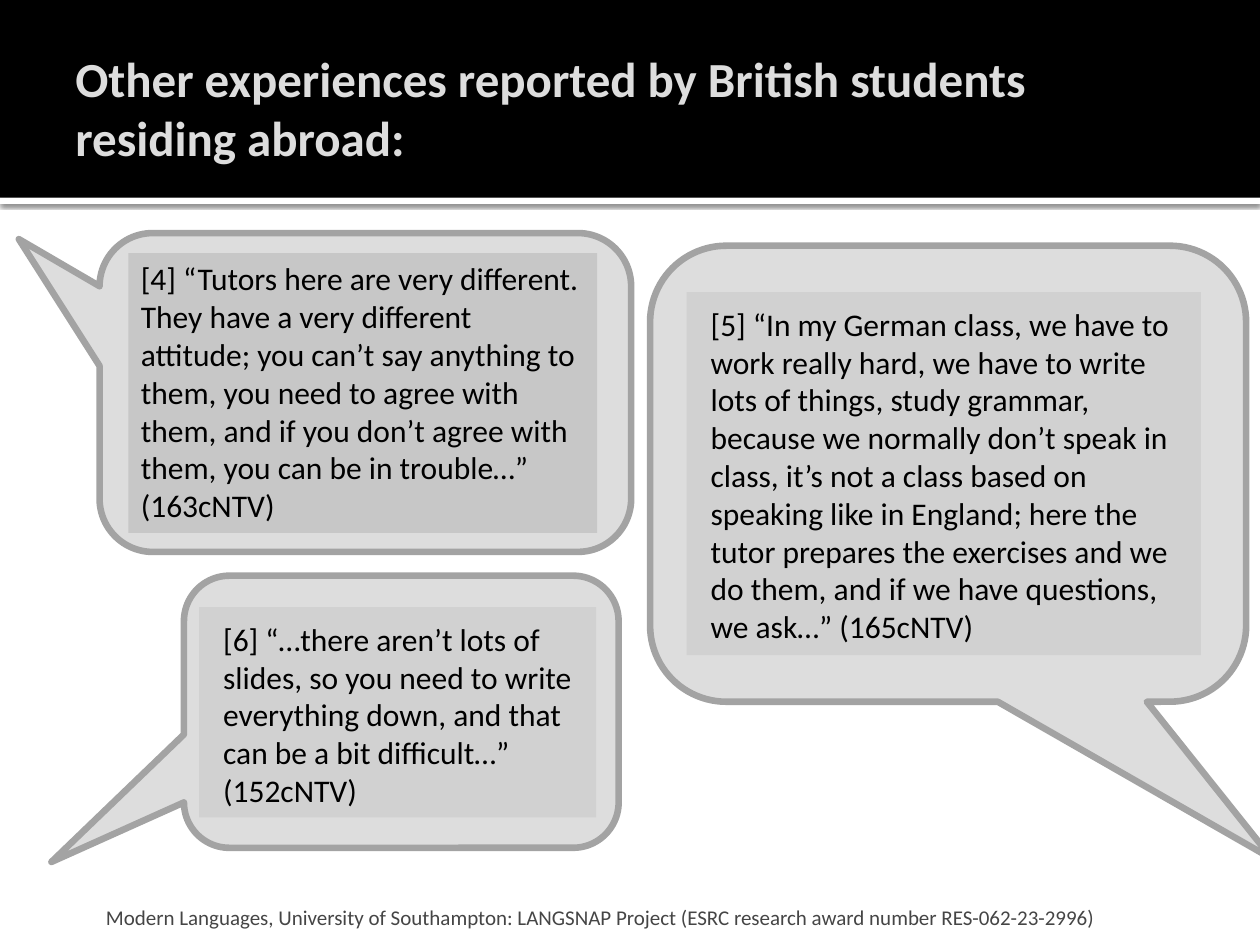
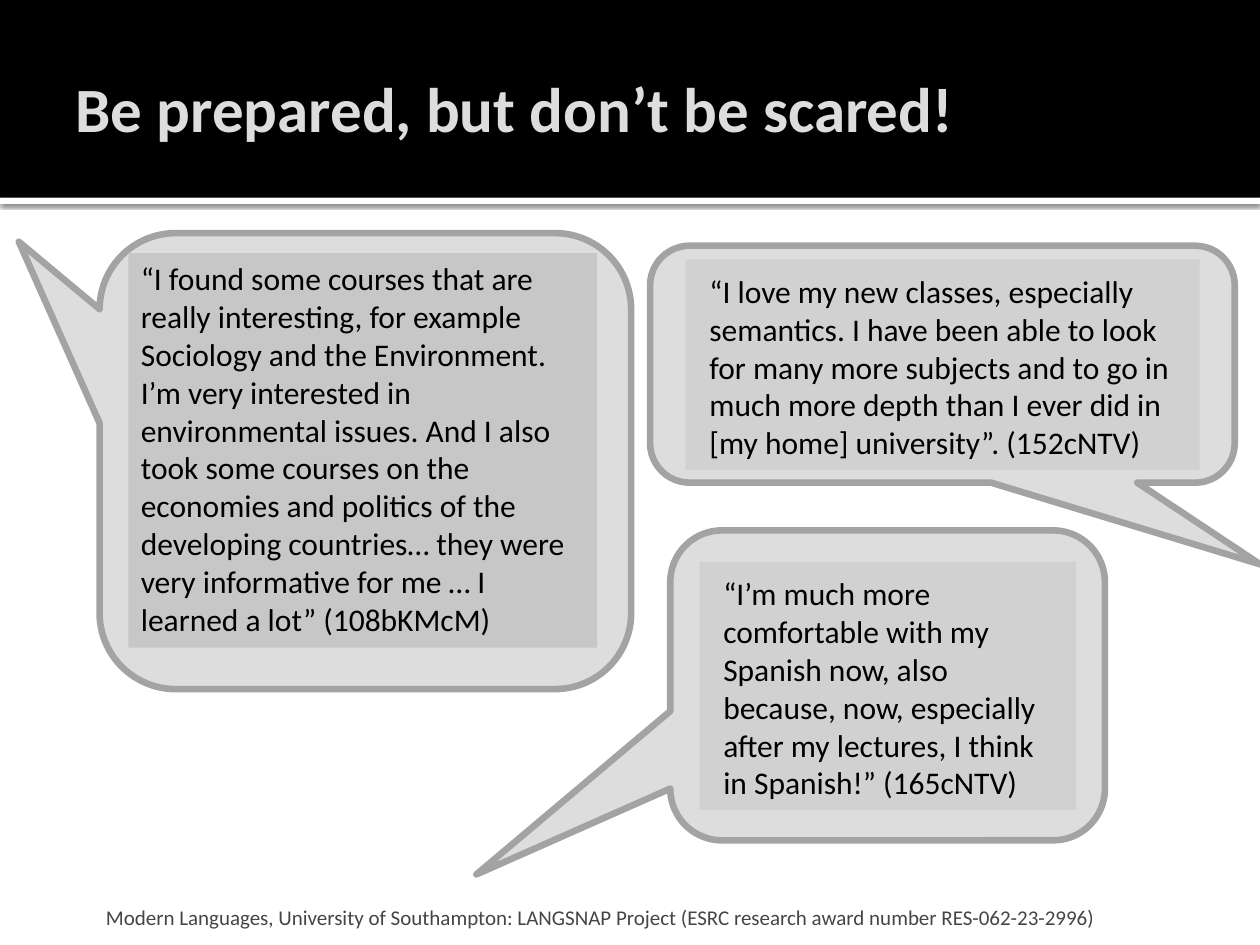
from dataclasses import dataclass
from typing import NamedTuple

from lxml.etree import SubElement
from pptx import Presentation
from pptx.dml.color import RGBColor
from pptx.enum.shapes import MSO_SHAPE
from pptx.enum.text import MSO_ANCHOR, MSO_AUTO_SIZE, PP_ALIGN
from pptx.oxml.ns import qn
from pptx.shapes.autoshape import Shape
from pptx.slide import Slide
from pptx.util import Pt


# Theme shared by both slides
@dataclass(frozen=True)
class Theme:
    font: str = "Calibri"
    band: str = "000000"
    rule: str = "FFFFFF"
    title: str = "DDDDDD"
    bubble: str = "DDDDDD"
    outline: str = "A3A3A3"
    dark_panel: str = "C7C7C7"
    light_panel: str = "D1D1D1"
    quote: str = "000000"
    footer: str = "454545"
    quote_size: float = 18
    footer_size: float = 12
    outline_width: float = 3.78
    corner: float = 0.167


class Box(NamedTuple):
    left: float
    top: float
    width: float
    height: float


class Insets(NamedTuple):
    left: float
    top: float
    right: float
    bottom: float


class TextStyle(NamedTuple):
    size: float
    color: str
    insets: Insets
    anchor: MSO_ANCHOR = MSO_ANCHOR.TOP
    bold: bool = False


class PanelStyle(NamedTuple):
    fill: str
    insets: Insets


class Quote(NamedTuple):
    bubble: Box
    tail: tuple[float, float]
    panel: Box
    style: PanelStyle
    paragraphs: tuple[str, ...]


class QuoteSlide(NamedTuple):
    title: str
    title_size: float
    quotes: tuple[Quote, ...]


THEME = Theme()
SLIDE_WIDTH, SLIDE_HEIGHT = 720, 540
BAND = Box(0, 0, SLIDE_WIDTH, 113)
RULE = Box(0, 113, SLIDE_WIDTH, 3.6)
TITLE = Box(36, 12.2, 648, 98.6)
FOOTER = Box(56.9, 508.3, 605.5, 23)
FOOTER_TEXT = ("Modern Languages, University of Southampton: LANGSNAP Project "
               "(ESRC research award number RES-062-23-2996)")

TITLE_INSETS = Insets(7.2, 3.6, 3.6, 3.6)
FOOTER_STYLE = TextStyle(THEME.footer_size, THEME.footer,
                         Insets(3.6, 3.6, 3.6, 0), MSO_ANCHOR.BOTTOM)
DARK = PanelStyle(THEME.dark_panel, Insets(7.2, 3.6, 7.2, 3.6))
LIGHT = PanelStyle(THEME.light_panel, Insets(13.7, 7.2, 7.2, 3.6))

UPPER_LEFT_TAIL = (-0.652, -0.481)
LOWER_RIGHT_TAIL = (0.544, 0.845)

# Quotes, listed from back to front
SLIDES = (
    QuoteSlide("Other experiences reported by British students residing abroad:", 28, (
        Quote(Box(371.5, 140.4, 340.6, 260.6), LOWER_RIGHT_TAIL,
              Box(392.4, 167, 293.8, 207.4), LIGHT,
              ("[5] “In my German class, we have to work really hard, we have to write "
               "lots of things, study grammar, because we normally don’t speak in class, "
               "it’s not a class based on speaking like in England; here the tutor "
               "prepares the exercises and we do them, and if we have questions, "
               "we ask…” (165cNTV)",)),
        Quote(Box(105.1, 329, 248.4, 155.5), (-0.805, 0.552),
              Box(113.8, 347, 226.8, 120.2), LIGHT,
              ("[6] “…there aren’t lots of slides, so you need to write everything "
               "down, and that can be a bit difficult…” (152cNTV)",)),
        Quote(Box(56.9, 133.2, 303.8, 182.2), UPPER_LEFT_TAIL,
              Box(73.4, 144.7, 267.8, 159.8), DARK,
              ("[4] “Tutors here are very different. They have a very different "
               "attitude; you can’t say anything to them, you need to agree with them, "
               "and if you don’t agree with them, you can be in trouble…”",
               "(163cNTV)")),
    )),
    QuoteSlide("Be prepared, but don’t be scared!", 36, (
        Quote(Box(371.5, 140.4, 334.1, 135.4), LOWER_RIGHT_TAIL,
              Box(391.7, 148.3, 293.8, 120.2), LIGHT,
              ("“I love my new classes, especially semantics. I have been able to look "
               "for many more subjects and to go in much more depth than I ever did in "
               "[my home] university”. (152cNTV)",)),
        Quote(Box(383, 303.1, 248.4, 177.1), (-0.946, 0.61),
              Box(399.6, 321.1, 215.3, 141.8), LIGHT,
              ("“I’m much more comfortable with my Spanish now, also because, now, "
               "especially after my lectures, I think in Spanish!” (165cNTV)",)),
        Quote(Box(56.9, 133.2, 303.8, 260.6), UPPER_LEFT_TAIL,
              Box(73.4, 144.7, 267.8, 225.4), DARK,
              ("“I found some courses that are really interesting, for example "
               "Sociology and the Environment. I’m very interested in environmental "
               "issues. And I also took some courses on the economies and politics of "
               "the developing countries… they were very informative for me … I "
               "learned a lot” (108bKMcM)",)),
    )),
)


# Drawing helpers
def in_points(box: Box) -> list[Pt]:
    return [Pt(length) for length in box]


def add_filled(slide: Slide, kind: MSO_SHAPE, box: Box, fill: str) -> Shape:
    shape = slide.shapes.add_shape(kind, *in_points(box))
    shape.shadow.inherit = False
    shape.fill.solid()
    shape.fill.fore_color.rgb = RGBColor.from_string(fill)
    shape.line.fill.background()
    return shape


def add_drop_shadow(shape: Shape) -> None:
    effects = shape._element.spPr.find(qn("a:effectLst"))
    shadow = SubElement(effects, qn("a:outerShdw"), blurRad=str(Pt(2.5)),
                        dist=str(Pt(0.8)), dir="5400000", rotWithShape="0")
    color = SubElement(shadow, qn("a:srgbClr"), val="000000")
    SubElement(color, qn("a:alpha"), val="60000")


def write(shape: Shape, paragraphs: tuple[str, ...], style: TextStyle) -> None:
    frame = shape.text_frame
    frame.word_wrap = True
    frame.vertical_anchor = style.anchor
    (frame.margin_left, frame.margin_top,
     frame.margin_right, frame.margin_bottom) = [Pt(inset) for inset in style.insets]
    frame.text = "\n".join(paragraphs)
    for paragraph in frame.paragraphs:
        paragraph.alignment = PP_ALIGN.LEFT
        paragraph.font.name = THEME.font
        paragraph.font.size = Pt(style.size)
        paragraph.font.bold = style.bold
        paragraph.font.color.rgb = RGBColor.from_string(style.color)


def add_bubble(slide: Slide, quote: Quote) -> None:
    bubble = add_filled(slide, MSO_SHAPE.ROUNDED_RECTANGULAR_CALLOUT,
                        quote.bubble, THEME.bubble)
    bubble.line.color.rgb = RGBColor.from_string(THEME.outline)
    bubble.line.width = Pt(THEME.outline_width)
    for index, value in enumerate((*quote.tail, THEME.corner)):
        bubble.adjustments[index] = value


def add_panel(slide: Slide, quote: Quote) -> None:
    panel = add_filled(slide, MSO_SHAPE.RECTANGLE, quote.panel, quote.style.fill)
    write(panel, quote.paragraphs,
          TextStyle(THEME.quote_size, THEME.quote, quote.style.insets))
    panel.text_frame.auto_size = MSO_AUTO_SIZE.SHAPE_TO_FIT_TEXT


def add_text(slide: Slide, box: Box, text: str, style: TextStyle) -> None:
    write(slide.shapes.add_textbox(*in_points(box)), (text,), style)


def build_slide(slide: Slide, content: QuoteSlide) -> None:
    # Title band with its shadowed rule
    add_drop_shadow(add_filled(slide, MSO_SHAPE.RECTANGLE, RULE, THEME.rule))
    add_filled(slide, MSO_SHAPE.RECTANGLE, BAND, THEME.band)
    # Speech bubbles lie behind all the quote panels
    for quote in content.quotes:
        add_bubble(slide, quote)
    add_text(slide, TITLE, content.title,
             TextStyle(content.title_size, THEME.title, TITLE_INSETS,
                       MSO_ANCHOR.MIDDLE, bold=True))
    for quote in content.quotes:
        add_panel(slide, quote)
    add_text(slide, FOOTER, FOOTER_TEXT, FOOTER_STYLE)


def main() -> None:
    presentation = Presentation()
    presentation.slide_width = Pt(SLIDE_WIDTH)
    presentation.slide_height = Pt(SLIDE_HEIGHT)
    blank = presentation.slide_layouts[6]
    for content in SLIDES:
        build_slide(presentation.slides.add_slide(blank), content)
    presentation.save("out.pptx")


if __name__ == "__main__":
    main()
